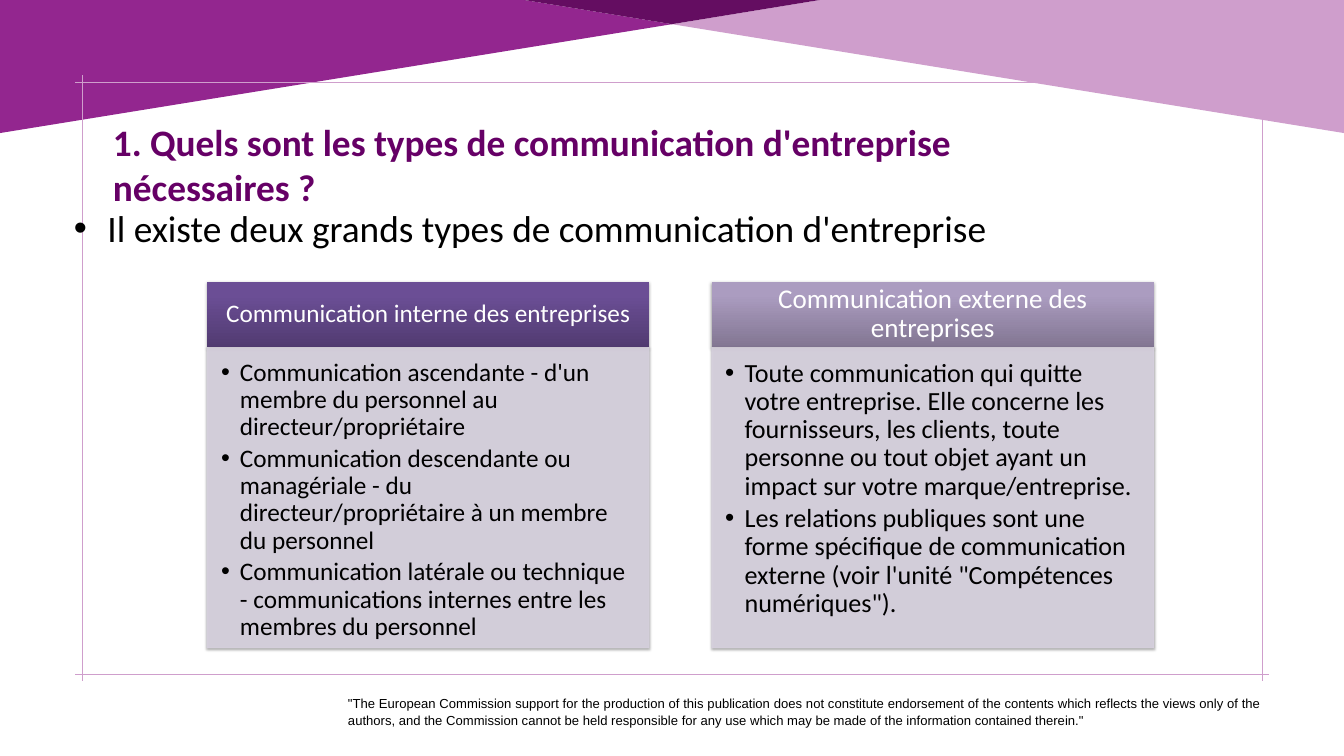
from lxml.etree import SubElement
from pptx import Presentation
from pptx.dml.color import RGBColor
from pptx.enum.shapes import MSO_CONNECTOR, MSO_SHAPE
from pptx.enum.text import MSO_ANCHOR, MSO_AUTO_SIZE, PP_ALIGN
from pptx.oxml import parse_xml
from pptx.oxml.ns import nsdecls, qn
from pptx.util import Inches, Pt

W, H = 20, 11.25
PURPLE, LILAC, DARK = "93268F", "CF9ECC", "640D61"
BAND_DROP, BAND_TIP, BAND_EDGE = 1.98, 0.36, 7.8
FRAME_X, FRAME_Y, FRAME_OVERHANG = 1.22, 1.22, 0.1
CARD_X, CARD_Y, CARD_W, CARD_STEP = 3.08, 4.19, 6.58, 7.51
HEAD_H, BODY_H = 0.98, 4.47

CARDS = [
    {"title": "Communication interne des entreprises", "title_size": 27,
     "gradient": [(0, "513B71"), (80, "6B4E95"), (100, "6B4D96")],
     "size": 27, "hang": 0.28,
     "items": [
         "Communication ascendante - d'un membre du personnel au directeur/propriétaire",
         "Communication descendante ou managériale - du directeur/propriétaire à un membre du personnel",
         "Communication latérale ou technique - communications internes entre les membres du personnel"]},
    {"title": "Communication externe des entreprises", "title_size": 29,
     "gradient": [(0, "827692"), (80, "AB9CC0"), (100, "AC9DC1")],
     "size": 28, "hang": 0.29,
     "items": [
         "Toute communication qui quitte votre entreprise. Elle concerne les fournisseurs, les clients, "
         "toute personne ou tout objet ayant un impact sur votre marque/entreprise.",
         "Les relations publiques sont une forme spécifique de communication externe "
         "(voir l'unité \"Compétences numériques\")."]},
]
DISCLAIMER = (
    "\"The European Commission support for the production of this publication does not constitute "
    "endorsement of the contents which reflects the views only of the authors, and the Commission cannot "
    "be held responsible for any use which may be made of the information contained therein.\"")


def rgb(color):
    return RGBColor.from_string(color)


def add_polygon(slide, points, color):
    pts = [(Inches(x), Inches(y)) for x, y in points]
    builder = slide.shapes.build_freeform(*pts[0], scale=1.0)
    builder.add_line_segments(pts[1:], close=True)
    sp = builder.convert_to_shape()
    sp.fill.solid()
    sp.fill.fore_color.rgb = rgb(color)
    sp.line.fill.background()
    sp.shadow.inherit = False


def add_hairline(slide, x1, y1, x2, y2):
    line = slide.shapes.add_connector(
        MSO_CONNECTOR.STRAIGHT, Inches(x1), Inches(y1), Inches(x2), Inches(y2))
    line.line.color.rgb = rgb(LILAC)
    line.line.width = Pt(0.5)
    SubElement(line._element.spPr, qn("a:effectLst"))


def setup_frame(sp, insets=(0.1, 0.05, 0.1, 0.05), anchor=MSO_ANCHOR.TOP):
    tf = sp.text_frame
    tf.word_wrap = True
    tf.auto_size = MSO_AUTO_SIZE.NONE
    tf.vertical_anchor = anchor
    tf.margin_left, tf.margin_top, tf.margin_right, tf.margin_bottom = map(Inches, insets)
    return tf


def add_run(p, text, size, color="000000", font="Calibri", bold=False):
    r = p.add_run()
    r.text = text
    r.font.size, r.font.name, r.font.bold = Pt(size), font, bold
    r.font.color.rgb = rgb(color)


def set_bullet(p, indent, hang):
    pPr = p._p.get_or_add_pPr()
    pPr.set("marL", str(Inches(indent)))
    pPr.set("indent", str(-Inches(hang)))
    SubElement(pPr, qn("a:buFont")).set("typeface", "Arial")
    SubElement(pPr, qn("a:buChar")).set("char", "•")


def add_textbox(slide, x, y, w, h):
    return setup_frame(slide.shapes.add_textbox(Inches(x), Inches(y), Inches(w), Inches(h)))


def add_panel(slide, x, y, h):
    sp = slide.shapes.add_shape(
        MSO_SHAPE.RECTANGLE, Inches(x), Inches(y), Inches(CARD_W), Inches(h))
    sp.line.fill.background()
    return sp


def add_soft_shadow(sp):
    sp._element.spPr.append(parse_xml(
        f'<a:effectLst {nsdecls("a")}><a:outerShdw blurRad="{Pt(3.1)}" dist="{Pt(1.8)}" dir="5400000" '
        'rotWithShape="0"><a:srgbClr val="000000"><a:alpha val="35000"/></a:srgbClr>'
        '</a:outerShdw></a:effectLst>'))


def set_gradient(sp, stops):
    """Fill from the bottom edge up to the top edge."""
    sp.fill.gradient()
    grad = sp._element.spPr.find(qn("a:gradFill"))
    gs = "".join(f'<a:gs pos="{pos * 1000}"><a:srgbClr val="{color}"/></a:gs>' for pos, color in stops)
    grad.getparent().replace(grad, parse_xml(
        f'<a:gradFill {nsdecls("a")} rotWithShape="1"><a:gsLst>{gs}</a:gsLst>'
        '<a:lin ang="16200000" scaled="0"/></a:gradFill>'))


def set_translucent(sp, color, percent):
    sp.fill.solid()
    sp.line.width = Pt(0.75)
    sp.line.fill.solid()
    for paint in (sp.fill.fore_color, sp.line.color):
        paint.rgb = rgb(color)
    for clr in sp._element.spPr.iter(qn("a:srgbClr")):
        SubElement(clr, qn("a:alpha")).set("val", str(percent * 1000))


def add_card(slide, x, card):
    head = add_panel(slide, x, CARD_Y, HEAD_H)
    set_gradient(head, card["gradient"])
    add_soft_shadow(head)
    p = setup_frame(head, (0.24, 0.14, 0.24, 0.14), MSO_ANCHOR.MIDDLE).paragraphs[0]
    p.alignment = PP_ALIGN.CENTER
    p.line_spacing = 0.9
    add_run(p, card["title"], card["title_size"], "FFFFFF")

    body = add_panel(slide, x, CARD_Y + HEAD_H, BODY_H)
    set_translucent(body, "D7D1DF", 89)
    add_soft_shadow(body)
    tf = setup_frame(body, (0.18, 0.18, 0.24, 0.27))
    for i, item in enumerate(card["items"]):
        p = tf.add_paragraph() if i else tf.paragraphs[0]
        set_bullet(p, 0.31, card["hang"])
        p.alignment = PP_ALIGN.LEFT
        p.line_spacing = 0.9
        if i:
            p.space_before = Pt(4.7)
        add_run(p, item, card["size"])


def add_backdrop(slide):
    mid = (W / 2, BAND_TIP)
    left, right = (BAND_EDGE, 0), (W - BAND_EDGE, 0)
    add_polygon(slide, [(0, BAND_DROP), (0, 0), left, mid], PURPLE)
    add_polygon(slide, [(W, BAND_DROP), mid, right, (W, 0)], LILAC)
    add_polygon(slide, [mid, left, right], DARK)
    x2, y2 = W - FRAME_X, H - FRAME_Y
    for y in (FRAME_Y, y2):
        add_hairline(slide, FRAME_X - FRAME_OVERHANG, y, x2 + FRAME_OVERHANG, y)
    for x in (FRAME_X, x2):
        add_hairline(slide, x, FRAME_Y - FRAME_OVERHANG, x, y2 + FRAME_OVERHANG)


def add_title(slide, text):
    title = slide.shapes.title
    title.left, title.top, title.width, title.height = map(Inches, (1.58, 1.72, 13.95, 1.4))
    p = setup_frame(title).paragraphs[0]
    p.alignment = PP_ALIGN.LEFT
    add_run(p, text, 40, "660066", bold=True)


def main():
    prs = Presentation()
    prs.slide_width, prs.slide_height = Inches(W), Inches(H)
    slide = prs.slides.add_slide(prs.slide_layouts[5])
    add_backdrop(slide)

    p = add_textbox(slide, 5.08, 10.29, 13.79, 0.52).paragraphs[0]
    p.alignment = PP_ALIGN.JUSTIFY
    p.line_spacing = 1.07
    add_run(p, DISCLAIMER, 14, font="Arial")

    add_title(slide, "1. Quels sont les types de communication d'entreprise nécessaires ?")
    p = add_textbox(slide, 1, 3, 14.42, 1).paragraphs[0]
    set_bullet(p, 0.5, 0.5)
    add_run(p, "Il existe deux grands types de communication d'entreprise", 40)

    for i, card in enumerate(CARDS):
        add_card(slide, CARD_X + i * CARD_STEP, card)
    prs.save("out.pptx")


if __name__ == "__main__":
    main()
